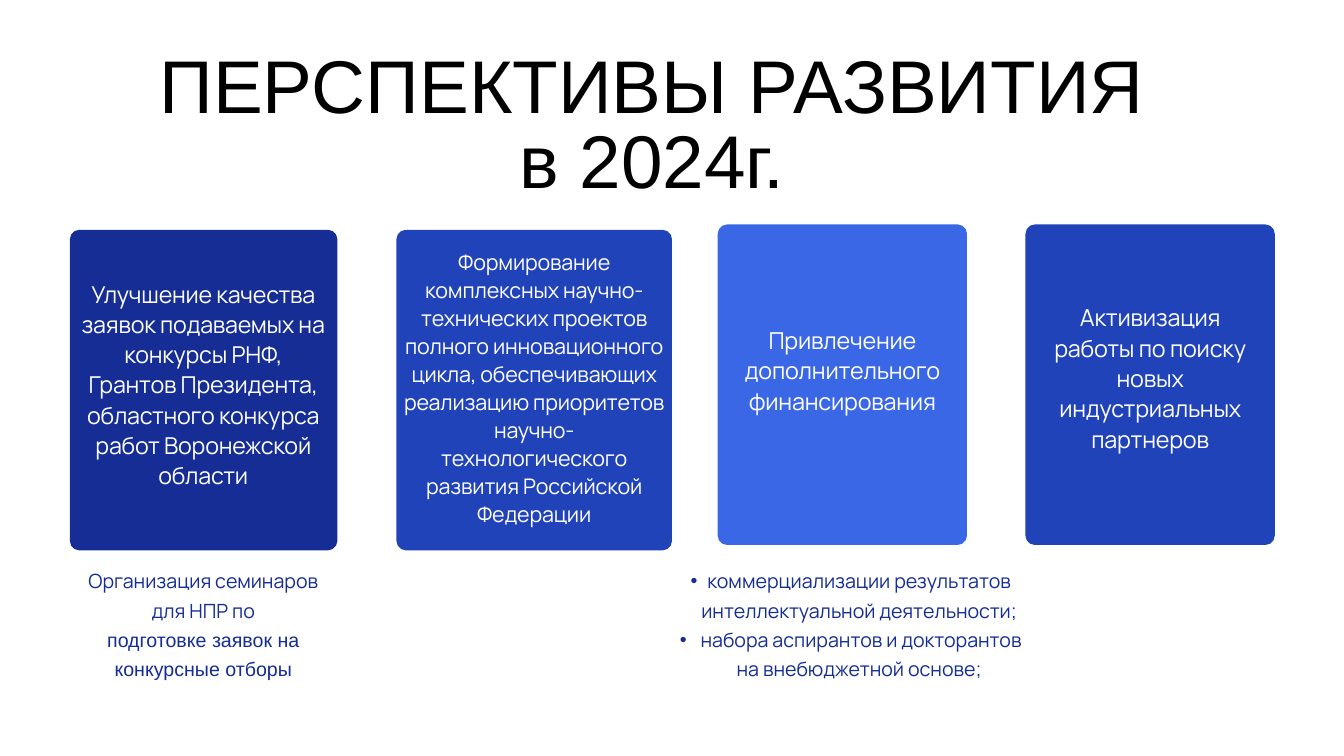
"""Builds the slide on development prospects for 2024."""
from dataclasses import dataclass

from lxml import etree
from pptx import Presentation
from pptx.dml.color import RGBColor
from pptx.enum.shapes import MSO_SHAPE
from pptx.enum.text import MSO_ANCHOR, PP_ALIGN
from pptx.oxml.ns import qn
from pptx.util import Emu, Pt

ROUNDED = MSO_SHAPE.ROUNDED_RECTANGLE
CENTER = PP_ALIGN.CENTER
TOP = MSO_ANCHOR.TOP
PX = 9144


@dataclass(frozen=True)
class Theme:
    """Colours, fonts and type sizes of the slide."""
    navy: str = "152D95"
    royal: str = "2143BA"
    bright: str = "3A67E6"
    white: str = "FFFFFF"
    black: str = "000000"
    body_font: str = "Manrope"
    plain_font: str = "Arial"
    title_size: float = 80
    card_size: float = 25
    dense_size: float = 23
    note_size: float = 21
    radius: int = 14


THEME = Theme()


@dataclass(frozen=True)
class Box:
    """A rectangle in px."""
    left: int
    top: int
    width: int
    height: int

    def emu(self) -> list[Emu]:
        """Return the four measures in EMU."""
        return [Emu(n * PX) for n in (self.left, self.top, self.width, self.height)]


@dataclass(frozen=True)
class Line:
    """One paragraph with its font."""
    text: str
    font: str = THEME.body_font


@dataclass(frozen=True)
class Block:
    """A text box with one type style."""
    box: Box
    lines: tuple[Line, ...]
    size: float
    leading: float
    color: str
    tracking: int = 0
    bulleted: bool = False


@dataclass(frozen=True)
class Card:
    """A rounded panel and the text on it."""
    panel: Box
    fill: str
    label: Box
    text: str
    size: float = THEME.card_size
    leading: float = 32.5


CARDS = (
    Card(Box(104, 342, 398, 477), THEME.navy, Box(117, 413, 371, 314),
         "Улучшение качества заявок подаваемых на конкурсы РНФ, Грантов Президента, "
         "областного конкурса работ Воронежской области", 24.9, 32.4),
    Card(Box(590, 342, 410, 477), THEME.royal, Box(597, 368, 396, 461),
         "Формирование комплексных научно-технических проектов полного инновационного "
         "цикла, обеспечивающих реализацию приоритетов научно-технологического "
         "развития Российской Федерации", THEME.dense_size, 29.9),
    Card(Box(1068, 334, 371, 477), THEME.bright, Box(1083, 482, 341, 135),
         "Привлечение дополнительного финансирования"),
    Card(Box(1526, 334, 371, 477), THEME.royal, Box(1566, 448, 291, 225),
         "Активизация работы по поиску новых индустриальных партнеров"),
)

TITLE = Block(Box(200, 80, 1541, 231),
              (Line("ПЕРСПЕКТИВЫ РАЗВИТИЯ в 2024г.", THEME.plain_font),),
              THEME.title_size, 80, THEME.black)

NOTES = (
    Block(Box(120, 838, 365, 175),
          (Line("Организация семинаров для НПР по"),
           Line("подготовке заявок на конкурсные отборы", THEME.plain_font)),
          THEME.note_size, 31.5, THEME.navy),
    Block(Box(971, 838, 565, 175),
          (Line("коммерциализации результатов интеллектуальной деятельности;"),
           Line(" набора аспирантов и докторантов на внебюджетной основе;")),
          THEME.note_size, 31.5, THEME.navy, bulleted=True),
)


def add_bullet(paragraph) -> None:
    """Give a paragraph a hanging round bullet."""
    paragraph.level = 1
    properties = paragraph._p.get_or_add_pPr()
    properties.set("marL", str(50 * PX))
    properties.set("indent", str(-25 * PX))
    etree.SubElement(properties, qn("a:buFont"), typeface=THEME.plain_font)
    etree.SubElement(properties, qn("a:buChar"), char="•")


def draw_block(slide, block: Block) -> None:
    """Draw a text box with centred paragraphs."""
    frame = slide.shapes.add_textbox(*block.box.emu()).text_frame
    frame.word_wrap = True
    frame.vertical_anchor = TOP
    frame.margin_left = frame.margin_right = frame.margin_top = frame.margin_bottom = 0
    frame.text = "\n".join(line.text for line in block.lines)
    for paragraph, line in zip(frame.paragraphs, block.lines):
        paragraph.alignment = CENTER
        paragraph.line_spacing = Pt(block.leading)
        if block.bulleted:
            add_bullet(paragraph)
        for run in paragraph.runs:
            run.font.name = line.font
            run.font.size = Pt(block.size)
            run.font.color.rgb = RGBColor.from_string(block.color)
            if block.tracking:
                run._r.get_or_add_rPr().set("spc", str(block.tracking))


def draw_card(slide, card: Card) -> None:
    """Draw a rounded panel and its text."""
    panel = slide.shapes.add_shape(ROUNDED, *card.panel.emu())
    panel.adjustments[0] = THEME.radius / min(card.panel.width, card.panel.height)
    panel.shadow.inherit = False
    panel.fill.solid()
    panel.fill.fore_color.rgb = RGBColor.from_string(card.fill)
    panel.line.fill.background()
    draw_block(slide, Block(card.label, (Line(card.text),), card.size,
                            card.leading, THEME.white, tracking=-20))


def main() -> None:
    """Build and save the presentation."""
    deck = Presentation()
    deck.slide_width, deck.slide_height = Emu(2000 * PX), Emu(1125 * PX)
    slide = deck.slides.add_slide(deck.slide_layouts[6])
    for card in CARDS:
        draw_card(slide, card)
    for block in (TITLE, *NOTES):
        draw_block(slide, block)
    deck.save("out.pptx")


if __name__ == "__main__":
    main()
